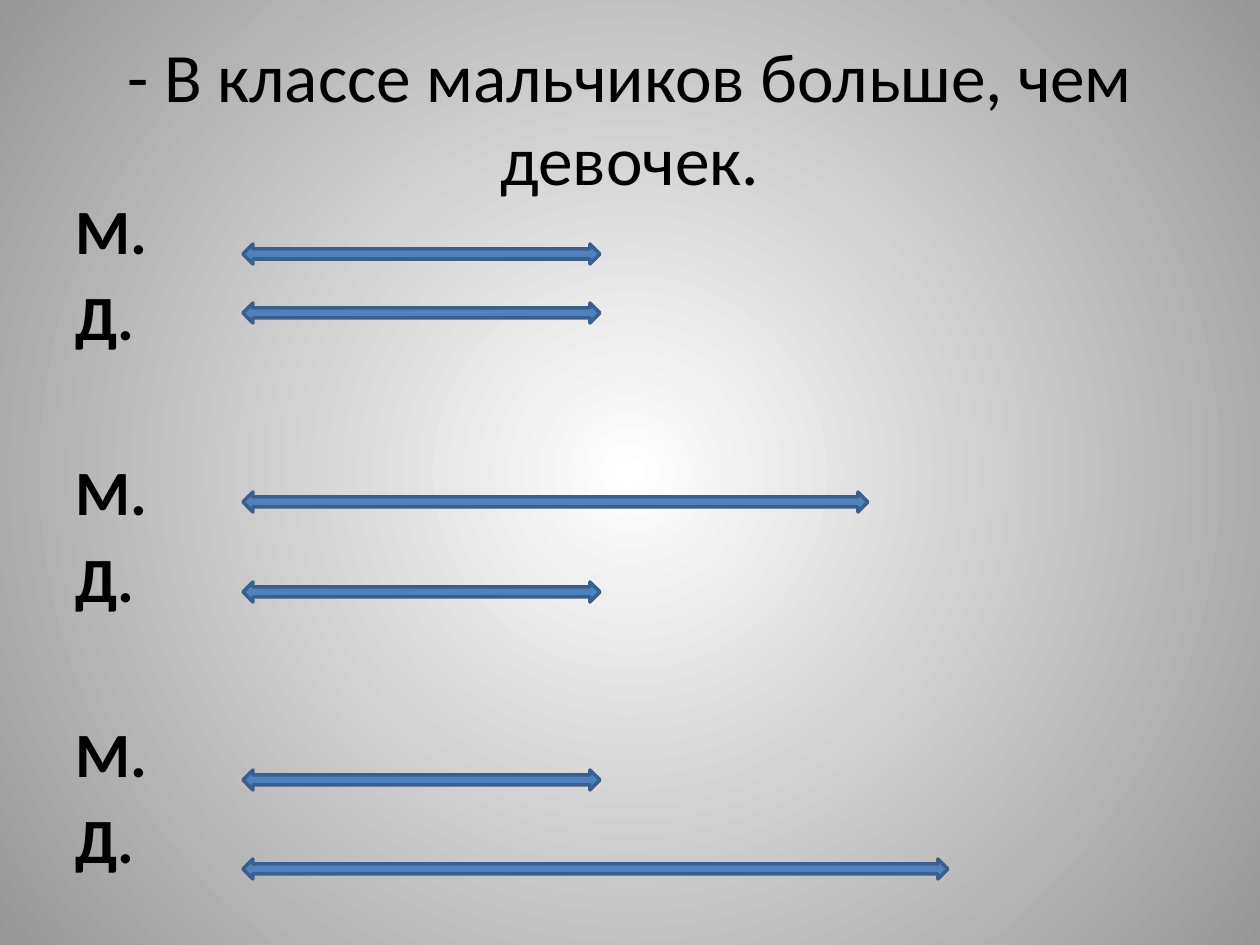
import pptx
import pptx.util
import pptx.dml.color
import pptx.enum.shapes
import pptx.enum.text
import pptx.oxml.ns
from dataclasses import dataclass
from lxml import etree

EMU_PER_PX = 914400 // 126


@dataclass(frozen=True)
class Theme:
    font: str = "Calibri"
    text: str = "000000"
    bar_fill: str = "4F81BD"
    bar_line: str = "3A5F8C"
    centre: str = "FFFFFF"
    edge: str = "979797"
    title_size: float = 39.6
    label_size: float = 36


THEME = Theme()

LABEL_GAP = 6.4    # points between the two labels of a pair
PAIR_GAP = 56.6    # points between pairs
BAR_LEFT, BAR_HEIGHT = 243, 20

# Each pair: (label, bar top, bar length) for boys and girls
PAIRS = [
    [("М.", 244, 357), ("Д.", 303, 357)],
    [("М.", 492, 625), ("Д.", 582, 357)],
    [("М.", 770, 357), ("Д.", 859, 705)],
]


def px(*lengths):
    return [pptx.util.Emu(length * EMU_PER_PX) for length in lengths]


def rgb(code):
    return pptx.dml.color.RGBColor.from_string(code)


def style_text(paragraph, size, bold=False):
    for run in paragraph.runs:
        run.font.name = THEME.font
        run.font.size = pptx.util.Pt(size)
        run.font.bold = bold
        run.font.color.rgb = rgb(THEME.text)


def paint_background(slide):
    fill = slide.background.fill
    fill.gradient()
    for stop, color in zip(fill.gradient_stops, (THEME.centre, THEME.edge)):
        stop.color.rgb = rgb(color)
    # Radial gradient from the middle of the slide
    qn = pptx.oxml.ns.qn
    linear = next(slide.background._cSld.iter(qn("a:lin")))
    radial = etree.Element(qn("a:path"), {"path": "circle"})
    etree.SubElement(radial, qn("a:fillToRect"),
                     {side: "50000" for side in "ltrb"})
    linear.getparent().replace(linear, radial)


def set_title(slide, text):
    title = slide.shapes.title
    title.left, title.top, title.width, title.height = px(63, 38, 1134, 157)
    frame = title.text_frame
    frame.text = text
    frame.word_wrap = True
    frame.auto_size = pptx.enum.text.MSO_AUTO_SIZE.NONE
    frame.vertical_anchor = pptx.enum.text.MSO_ANCHOR.MIDDLE
    frame.paragraphs[0].alignment = pptx.enum.text.PP_ALIGN.CENTER
    style_text(frame.paragraphs[0], THEME.title_size)


def add_labels(slide):
    frame = slide.shapes.add_textbox(*px(63, 185, 1134, 714)).text_frame
    frame.word_wrap = True
    frame.text = "\n".join(label for pair in PAIRS for label, _, _ in pair)
    for index, paragraph in enumerate(frame.paragraphs):
        if index:
            gap = LABEL_GAP if index % 2 else PAIR_GAP
            paragraph.space_before = pptx.util.Pt(gap)
        style_text(paragraph, THEME.label_size, bold=True)


def add_bar(slide, top, length):
    bar = slide.shapes.add_shape(
        pptx.enum.shapes.MSO_SHAPE.LEFT_RIGHT_ARROW,
        *px(BAR_LEFT, top, length, BAR_HEIGHT))
    bar.shadow.inherit = False
    bar.fill.solid()
    bar.fill.fore_color.rgb = rgb(THEME.bar_fill)
    bar.line.color.rgb = rgb(THEME.bar_line)
    bar.line.width = pptx.util.Pt(2)


def main():
    presentation = pptx.Presentation()
    presentation.slide_width, presentation.slide_height = px(1260, 945)
    slide = presentation.slides.add_slide(presentation.slide_layouts[5])

    paint_background(slide)
    set_title(slide, "- В классе мальчиков больше, чем девочек.")

    # Labels and the bars that compare the two groups
    add_labels(slide)
    for pair in PAIRS:
        for _, top, length in pair:
            add_bar(slide, top, length)

    presentation.save("out.pptx")


if __name__ == "__main__":
    main()
